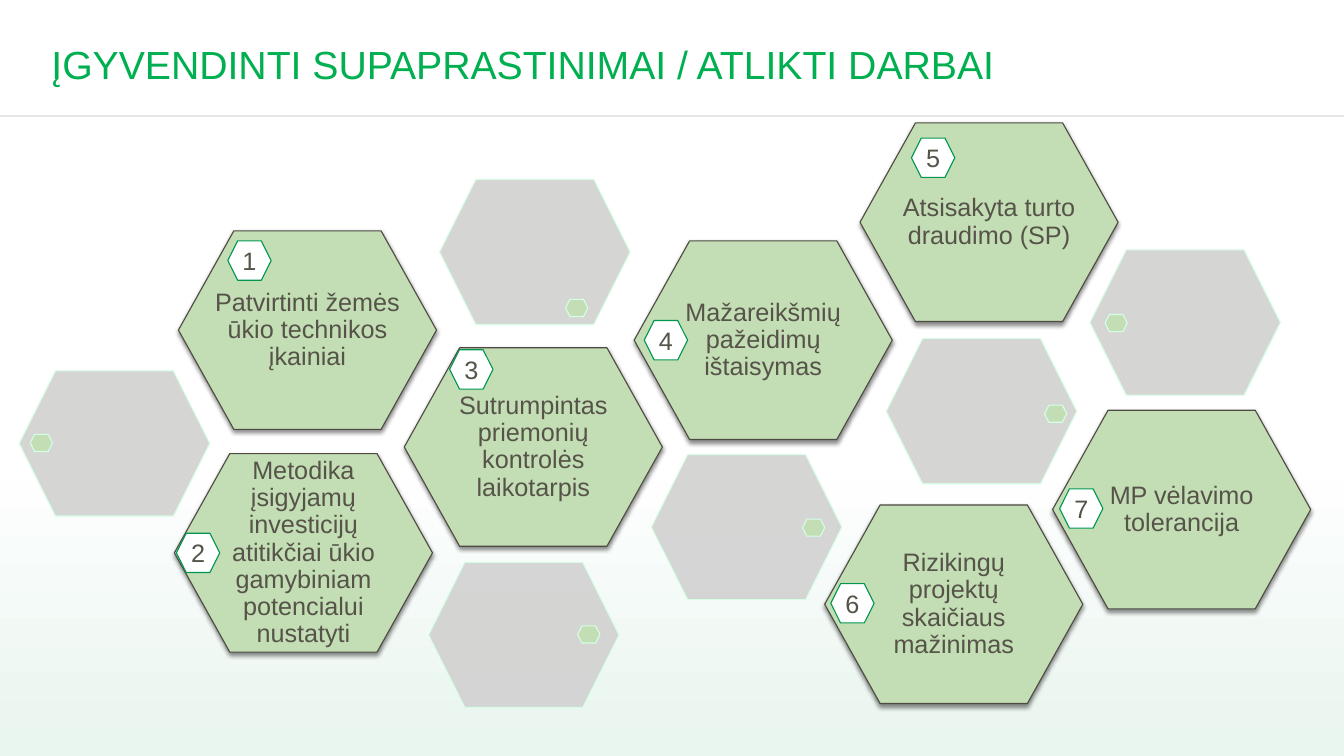
from lxml.etree import SubElement
from pptx import Presentation
from pptx.dml.color import RGBColor
from pptx.enum.shapes import MSO_CONNECTOR, MSO_SHAPE
from pptx.enum.text import MSO_ANCHOR, MSO_AUTO_SIZE, PP_ALIGN
from pptx.oxml.ns import qn
from pptx.util import Inches, Pt

HUES = {
    "back": "A6B727", "white": "FFFFFF", "mist": "E9F5EF", "rule": "E6E6E6",
    "green": "C3DDB5", "dark": "4E4B42", "gray": "D1D1D0", "mint": "D5FFE5",
    "edge": "009650", "text": "565349", "title": "00B050",
}
TILES = [
    (1.73, 4.5, ["Metodika įsigyjamų investicijų atitikčiai ūkio gamybiniam "
                 "potencialui nustatyti"]),
    (4.01, 3.45, ["Sutrumpintas priemonių kontrolės laikotarpis"]),
    (1.77, 2.29, ["Patvirtinti žemės ūkio technikos įkainiai"]),
    (6.29, 2.39, ["Mažareikšmių pažeidimų ištaisymas"]),
    (8.53, 1.22, ["Atsisakyta turto draudimo (SP)"]),
    (8.18, 5.01, ["Rizikingų", "projektų", "skaičiaus", "mažinimas"]),
    (10.44, 4.07, ["MP vėlavimo tolerancija"]),
]
CELLS = [
    (0.19, 3.68, 0.3, 4.31), (6.46, 4.51, 7.96, 5.15),
    (4.36, 1.78, 5.61, 2.97), (10.81, 2.48, 10.96, 3.12),
    (8.79, 3.36, 10.36, 4.02), (4.25, 5.58, 5.73, 6.21),
]
BADGES = [(2.26, 2.39), (1.75, 5.29), (4.46, 3.47), (6.39, 3.18),
          (9.04, 1.37), (8.24, 5.79), (10.51, 4.85)]


def hue(name):
    """Return the named colour."""
    return RGBColor.from_string(HUES[name])


def apply(item, values):
    """Set each attribute of an item from a dict."""
    for name, value in values.items():
        setattr(item, name, value)


def paint(shape, fill, line):
    """Give a shape a plain fill and a thin outline without shadow."""
    shape.shadow.inherit = False
    shape.fill.solid()
    shape.fill.fore_color.rgb = hue(fill)
    shape.line.color.rgb = hue(line)
    shape.line.width = Pt(0.79)


def write(shape, lines, color="text", size=18, pad=(0, 0), space=1.0,
          align=PP_ALIGN.CENTER):
    """Write formatted paragraphs into a shape."""
    side, top = map(Inches, pad)
    frame = shape.text_frame
    frame.text = "\n".join(lines)
    apply(frame, {
        "word_wrap": True, "auto_size": MSO_AUTO_SIZE.NONE,
        "vertical_anchor": MSO_ANCHOR.MIDDLE,
        "margin_left": side, "margin_right": side,
        "margin_top": top, "margin_bottom": top,
    })
    for para in frame.paragraphs:
        apply(para, {"alignment": align, "line_spacing": space})
        for run in para.runs:
            apply(run.font, {"name": "Arial", "size": Pt(size)})
            run.font.color.rgb = hue(color)


def shade(shape):
    """Cast a soft shadow straight down."""
    effects = shape.element.spPr.find(qn("a:effectLst"))
    cast = SubElement(effects, qn("a:outerShdw"), blurRad=str(Pt(3)),
                      dist=str(Pt(2)), dir="5400000", rotWithShape="0")
    color = SubElement(cast, qn("a:srgbClr"), val="000000")
    SubElement(color, qn("a:alpha"), val="45000")


def hexagon(shapes, left, top, wide, high, fill, line):
    """Add a preset hexagon."""
    shape = shapes.add_shape(MSO_SHAPE.HEXAGON, Inches(left), Inches(top),
                             Inches(wide), Inches(high))
    paint(shape, fill, line)
    return shape


def tile(shapes, left, top, lines):
    """Add a large green hexagon with text."""
    wide, high, cut = 2.56, 1.97, 0.55
    spots = [(0, high / 2), (cut, 0), (wide - cut, 0), (wide, high / 2),
             (wide - cut, high), (cut, high)]
    points = [(Inches(left + x), Inches(top + y)) for x, y in spots]
    pen = shapes.build_freeform(*points[0])
    pen.add_line_segments(points[1:], close=True)
    shape = pen.convert_to_shape()
    paint(shape, "green", "dark")
    shade(shape)
    write(shape, lines, pad=(0.26, 0.24), space=0.9)


def cell(shapes, left, top, x, y):
    """Add a gray hexagon grouped with its small green dot."""
    group = shapes.add_group_shape()
    plate = hexagon(group.shapes, left, top, 1.89, 1.44, "gray", "mint")
    color = plate.element.spPr.find(qn("a:solidFill"))[0]
    SubElement(color, qn("a:alpha"), val="90000")
    hexagon(group.shapes, x, y, 0.22, 0.17, "green", "mint")


def badge(shapes, left, top, number):
    """Add a small numbered hexagon."""
    shape = hexagon(shapes, left, top, 0.43, 0.39, "white", "edge")
    write(shape, [str(number)])
    shape.text_frame.word_wrap = False


def backdrop(slide, wide, high):
    """Add the fading background and the line under the title."""
    slide.background.fill.solid()
    slide.background.fill.fore_color.rgb = hue("back")
    sheet = slide.shapes.add_shape(MSO_SHAPE.RECTANGLE, 0, 0, wide, high)
    sheet.shadow.inherit = False
    sheet.line.fill.background()
    sheet.fill.gradient()
    sheet.fill.gradient_angle = 90
    stops = zip(sheet.fill.gradient_stops, ("mist", "white"), (0, 0.4))
    for stop, name, place in stops:
        stop.color.rgb = hue(name)
        stop.position = place
    rule = slide.shapes.add_connector(MSO_CONNECTOR.STRAIGHT, 0, Inches(1.15),
                                      wide, Inches(1.15))
    rule.line.color.rgb = hue("rule")
    rule.line.width = Pt(1)
    SubElement(rule.element.spPr, qn("a:effectLst"))


def heading(slide, text):
    """Place the title above the backdrop."""
    title = slide.shapes.title
    apply(title, {"left": Inches(0.41), "top": Inches(0.22),
                  "width": Inches(10.17), "height": Inches(0.92)})
    write(title, [text], "title", 28, (0.1, 0.05), 0.8, PP_ALIGN.LEFT)
    slide.shapes.element.append(title.element)


def main():
    """Build and save the slide."""
    deck = Presentation()
    apply(deck, {"slide_width": Inches(13.33), "slide_height": Inches(7.5)})
    slide = deck.slides.add_slide(deck.slide_layouts[5])
    backdrop(slide, deck.slide_width, deck.slide_height)
    for spot in CELLS:
        cell(slide.shapes, *spot)
    for item in TILES:
        tile(slide.shapes, *item)
    heading(slide, "ĮGYVENDINTI SUPAPRASTINIMAI / ATLIKTI DARBAI")
    for number, spot in enumerate(BADGES, 1):
        badge(slide.shapes, *spot, number)
    deck.save("out.pptx")


if __name__ == "__main__":
    main()
